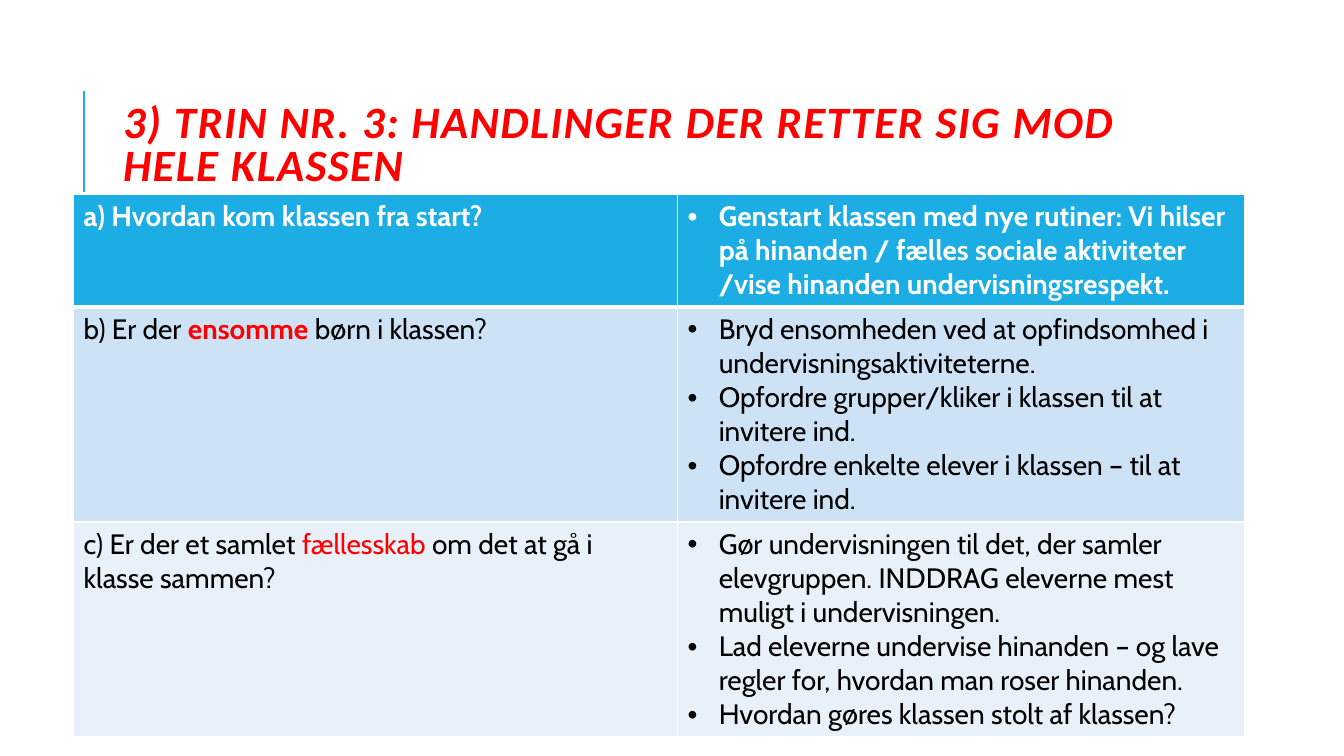
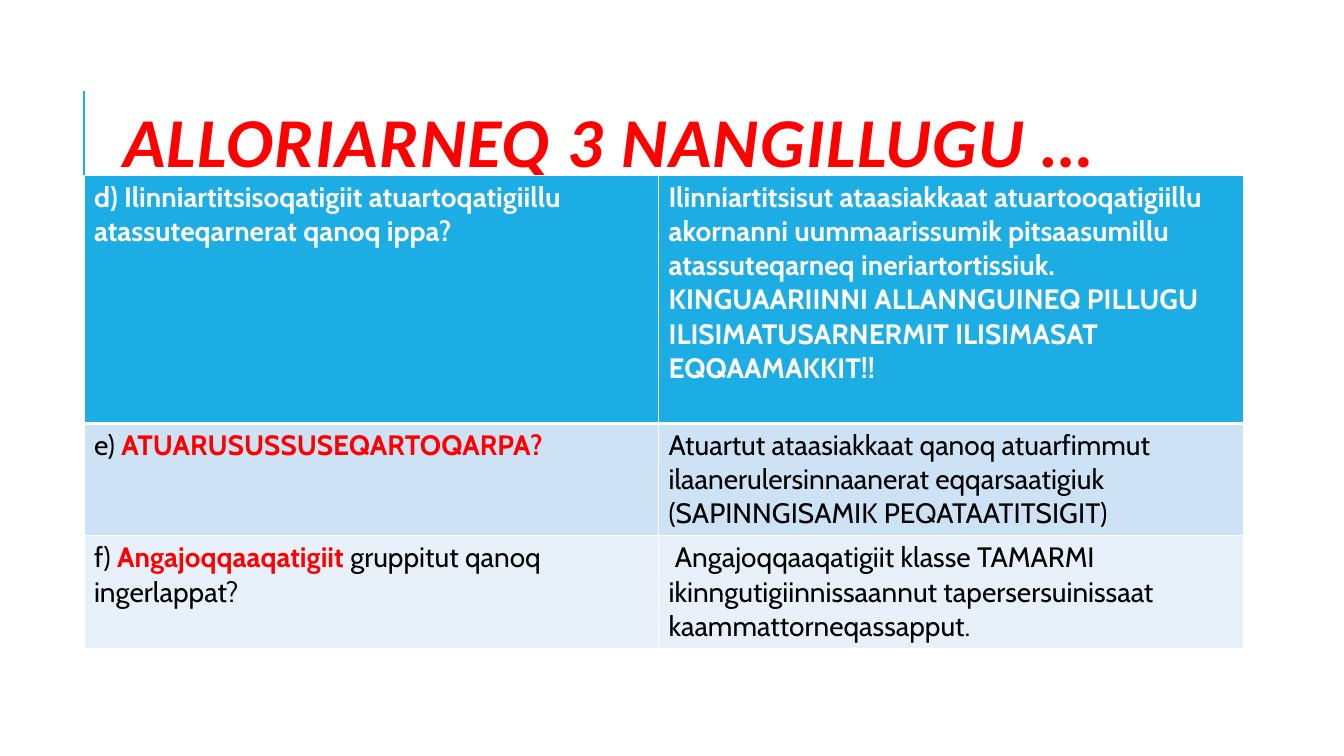
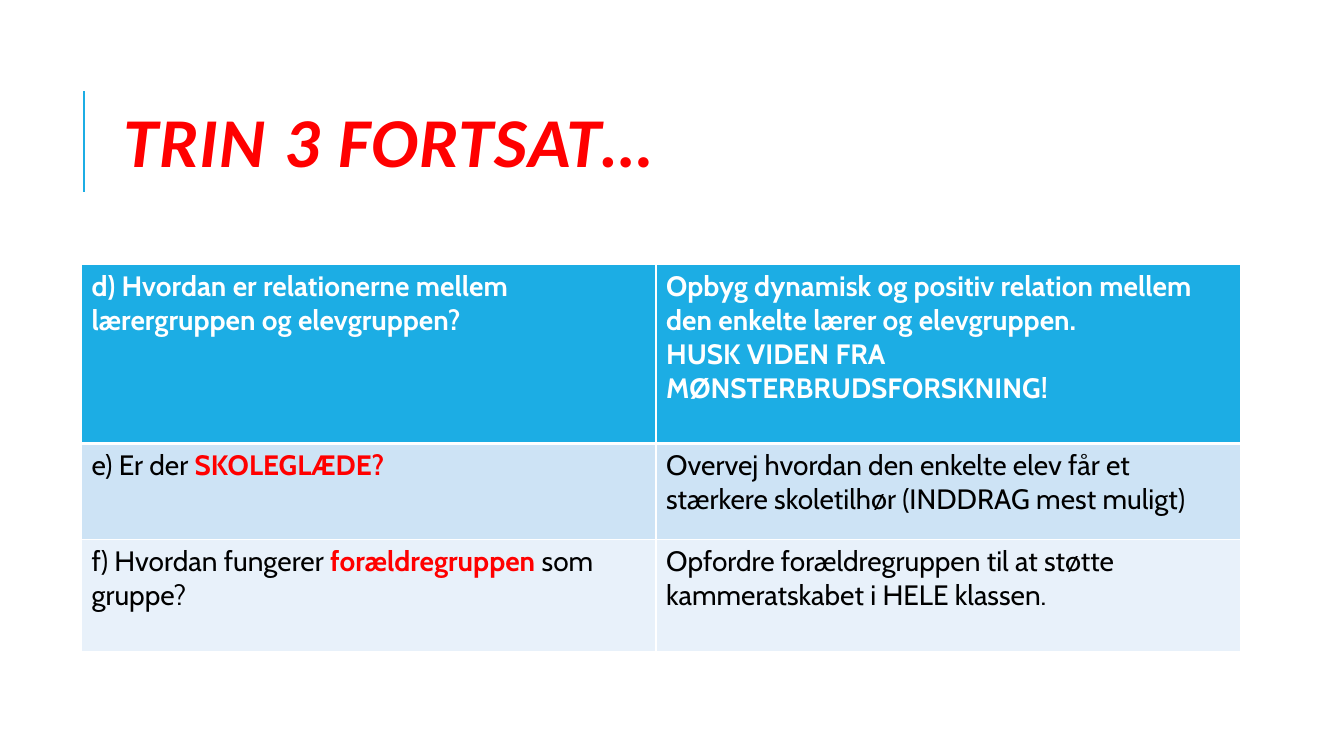
from collections import namedtuple

from lxml import etree
from pptx import Presentation, util as u
from pptx.dml.color import RGBColor
from pptx.enum import shapes, text
from pptx.oxml.ns import qn

WIDTH, HEIGHT = u.Inches(13.33), u.Inches(7.5)
COLUMN, ROW = WIDTH / 32, HEIGHT / 30

BLUE = RGBColor(0x1C, 0xAD, 0xE4)
RED = RGBColor(0xFF, 0x00, 0x00)
WHITE = RGBColor(0xFF, 0xFF, 0xFF)
BLACK = RGBColor(0x00, 0x00, 0x00)
ROW_FILLS = (BLUE, RGBColor(0xCD, 0xE3, 0xF5), RGBColor(0xE8, 0xF1, 0xFA))

TITLE_FONT, BODY_FONT = "Calibri", "Cabin"
BODY_SIZE = 20
BULLET_INDENT = u.Inches(0.31)
THIN, THICK = u.Pt(1), u.Pt(3)

Box = namedtuple("Box", "left top width height")
Red = namedtuple("Red", "words bold", defaults=(True,))
Page = namedtuple("Page", "title size left top columns rows bulleted cells")

TITLE_BOX = Box(2.69, 2.56, 25.51, 6.56)
RULE_BOX = Box(2, 3.6, 0, 4)

PAGES = [
    Page("3) TRIN NR. 3: HANDLINGER DER RETTER SIG MOD HELE KLASSEN", 32,
         1.75, 7.72, (14.38, 13.51), (4.44, 8.52, 8.52), True, [
             ([["a) Hvordan kom klassen fra start?"]],
              [["Genstart klassen med nye rutiner: Vi hilser på hinanden / "
                "fælles sociale aktiviteter /vise hinanden undervisningsrespekt."]]),
             ([["b) Er der ", Red("ensomme"), " børn i klassen?"]],
              [["Bryd ensomheden ved at opfindsomhed i undervisningsaktiviteterne."],
               ["Opfordre grupper/kliker i klassen til at invitere ind."],
               ["Opfordre enkelte elever i klassen – til at invitere ind."]]),
             ([["c) Er der et samlet ", Red("fællesskab ", False),
                "om det at gå i klasse sammen?"]],
              [["Gør undervisningen til det, der samler elevgruppen. "
                "INDDRAG eleverne mest muligt i undervisningen."],
               ["Lad eleverne undervise hinanden – og lave regler for, "
                "hvordan man roser hinanden."],
               ["Hvordan gøres klassen stolt af klassen?"]]),
         ]),
    Page("ALLORIARNEQ 3 NANGILLUGU …", 50,
         2, 6.96, (13.68, 13.92), (9.84, 4.44, 4.48), False, [
             ([["d) Ilinniartitsisoqatigiit atuartoqatigiillu "
                "atassuteqarnerat qanoq ippa?"]],
              [["Ilinniartitsisut ataasiakkaat atuartooqatigiillu akornanni "
                "uummaarissumik pitsaasumillu atassuteqarneq ineriartortissiuk."],
               ["KINGUAARIINNI ALLANNGUINEQ PILLUGU ILISIMATUSARNERMIT "
                "ILISIMASAT EQQAAMAKKIT!!"]]),
             ([["e) ", Red("ATUARUSUSSUSEQARTOQARPA?")]],
              [["Atuartut ataasiakkaat qanoq atuarfimmut ilaanerulersinnaanerat "
                "eqqarsaatigiuk (SAPINNGISAMIK PEQATAATITSIGIT)"]]),
             ([["f) ", Red("Angajoqqaaqatigiit "), "gruppitut qanoq ingerlappat?"]],
              [[" Angajoqqaaqatigiit klasse TAMARMI ikinngutigiinnissaannut "
                "tapersersuinissaat kaammattorneqassapput."]]),
         ]),
    Page("TRIN 3 FORTSAT…", 50,
         1.94, 10.48, (13.68, 13.92), (7.12, 3.8, 4.44), False, [
             ([["d) Hvordan er relationerne mellem"],
               ["lærergruppen og elevgruppen?"]],
              [["Opbyg dynamisk og positiv relation mellem den enkelte lærer "
                "og elevgruppen."],
               ["HUSK VIDEN FRA MØNSTERBRUDSFORSKNING!"]]),
             ([["e) Er der ", Red("SKOLEGLÆDE?")]],
              [["Overvej hvordan den enkelte elev får et stærkere skoletilhør "
                "(INDDRAG mest muligt)"]]),
             ([["f) Hvordan fungerer ", Red("forældregruppen"), " som gruppe?"]],
              [["Opfordre forældregruppen til at støtte kammeratskabet "
                "i HELE klassen."]]),
         ]),
]


def to_lengths(box):
    """Turn a box in grid units into slide lengths."""
    return Box(round(box.left * COLUMN), round(box.top * ROW),
               round(box.width * COLUMN), round(box.height * ROW))


def style_span(span, font, size, color, bold, italic=False):
    """Set the character format of one run."""
    span.font.name = font
    span.font.size = u.Pt(size)
    span.font.color.rgb = color
    span.font.bold = bold
    span.font.italic = italic


def add_title(slide, words, size, box):
    """Place and format the title placeholder."""
    title = slide.shapes.title
    title.left, title.top, title.width, title.height = to_lengths(box)
    frame = title.text_frame
    frame.text = words
    frame.word_wrap = True
    frame.auto_size = text.MSO_AUTO_SIZE.NONE
    frame.vertical_anchor = text.MSO_ANCHOR.MIDDLE
    para = frame.paragraphs[0]
    para.alignment = text.PP_ALIGN.LEFT
    para.line_spacing = 0.8
    span = para.runs[0]
    style_span(span, TITLE_FONT, size, RED, True, True)
    span.font._element.set("spc", "100")


def add_title_rule(slide, box):
    """Draw the thin vertical rule left of the title."""
    left, top, width, height = to_lengths(box)
    rule = slide.shapes.add_connector(
        shapes.MSO_CONNECTOR.STRAIGHT, left, top + height, left + width, top)
    rule.line.color.rgb = BLUE
    rule.line.width = u.Pt(1.5)
    etree.SubElement(rule._element.spPr, qn("a:effectLst"))


def add_borders(cell, row):
    """Give a cell white borders, thicker below the heading row."""
    widths = {"L": THIN, "R": THIN,
              "T": THICK if row == 1 else THIN,
              "B": THICK if row == 0 else THIN}
    properties = cell._tc.get_or_add_tcPr()
    for side, width in widths.items():
        line = etree.SubElement(properties, qn(f"a:ln{side}"), w=str(width))
        fill = etree.SubElement(line, qn("a:solidFill"))
        etree.SubElement(fill, qn("a:srgbClr"), val=str(WHITE))


def add_bullet(para):
    """Give a paragraph a hanging round bullet."""
    properties = para._p.get_or_add_pPr()
    properties.set("marL", str(BULLET_INDENT))
    properties.set("indent", str(-BULLET_INDENT))
    etree.SubElement(properties, qn("a:buFont"), typeface="Arial")
    etree.SubElement(properties, qn("a:buChar"), char="•")


def fill_cell(cell, paragraphs, row, bulleted):
    """Write the paragraphs of one cell and format it for its row."""
    add_borders(cell, row)
    cell.fill.solid()
    cell.fill.fore_color.rgb = ROW_FILLS[row]
    heading = row == 0
    frame = cell.text_frame
    for number, parts in enumerate(paragraphs):
        para = frame.add_paragraph() if number else frame.paragraphs[0]
        if bulleted:
            add_bullet(para)
        for part in parts:
            span = para.add_run()
            if isinstance(part, Red):
                span.text = part.words
                style_span(span, BODY_FONT, BODY_SIZE, RED, part.bold)
            else:
                span.text = part
                style_span(span, BODY_FONT, BODY_SIZE,
                           WHITE if heading else BLACK, heading)


def add_question_table(slide, page, box):
    """Build the table of questions and actions in the given box."""
    table = slide.shapes.add_table(
        len(page.rows), len(page.columns), *to_lengths(box)).table
    table.first_row = table.horz_banding = False
    for column, width in zip(table.columns, page.columns):
        column.width = round(width * COLUMN)
    for row, height in zip(table.rows, page.rows):
        row.height = round(height * ROW)
    for row, contents in enumerate(page.cells):
        for column, paragraphs in enumerate(contents):
            fill_cell(table.cell(row, column), paragraphs, row,
                      page.bulleted and column == 1)


def add_page(deck, page):
    """Add one slide with title, rule and table."""
    slide = deck.slides.add_slide(deck.slide_layouts[5])
    add_title_rule(slide, RULE_BOX)
    add_title(slide, page.title, page.size, TITLE_BOX)
    add_question_table(slide, page, Box(page.left, page.top,
                                        sum(page.columns), sum(page.rows)))


def main():
    """Build the deck and save it."""
    deck = Presentation()
    deck.slide_width, deck.slide_height = WIDTH, HEIGHT
    for page in PAGES:
        add_page(deck, page)
    deck.save("out.pptx")


if __name__ == "__main__":
    main()
